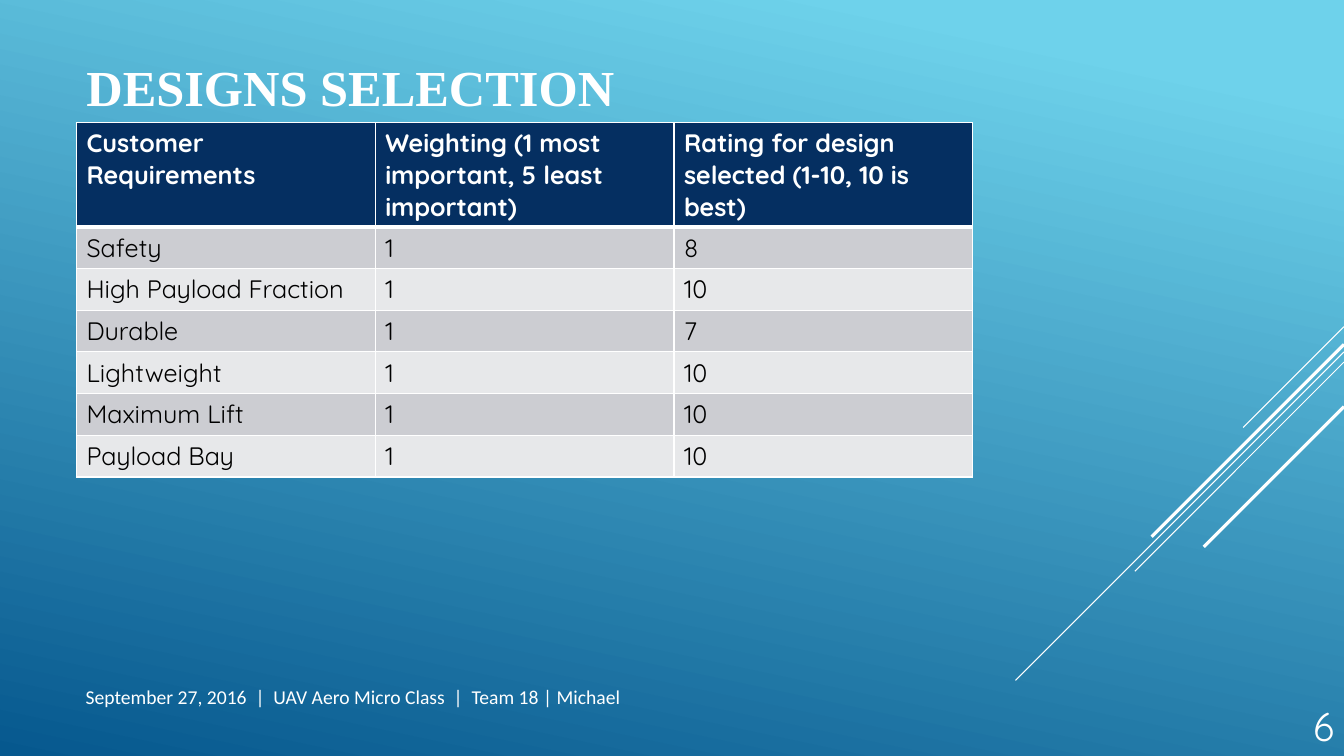
from lxml.etree import SubElement
from pptx import Presentation
from pptx.dml.color import RGBColor
from pptx.enum.shapes import MSO_CONNECTOR
from pptx.enum.text import MSO_ANCHOR, PP_ALIGN
from pptx.oxml.ns import qn
from pptx.util import Inches, Pt

COLORS = {
    "white": "FFFFFF",
    "black": "000000",
    "sky": "6ED2EB",
    "deep": "06588E",
    "navy": "052F61",
    "band_dark": "CCCDD2",
    "band_light": "E7E8EA",
}
COLS, ROWS = 160, 90  # grid over the whole slide

REQUIREMENTS = [
    ("Customer Requirements", "Weighting (1 most important, 5 least important)",
     "Rating for design selected (1-10, 10 is best)"),
    ("Safety", "1", "8"),
    ("High Payload Fraction", "1", "10"),
    ("Durable", "1", "7"),
    ("Lightweight", "1", "10"),
    ("Maximum Lift", "1", "10"),
    ("Payload Bay", "1", "10"),
]

# Diagonals from the right edge: start row, length in cells, width in points
DIAGONALS = [(38.9, 12, 0.75), (41.9, 39.1, 0.75), (43.1, 24.9, 0.75),
             (41, 22.9, 2.25), (48.4, 16.7, 2.25)]


def rgb(name):
    return RGBColor.from_string(COLORS[name])


class Deck:
    def __init__(self):
        self.prs = Presentation()
        self.prs.slide_width, self.prs.slide_height = Inches(13.33), Inches(7.5)
        self.s = self.prs.slides.add_slide(self.prs.slide_layouts[6])

    def x(self, cols):
        return round(self.prs.slide_width * cols / COLS)

    def y(self, rows):
        return round(self.prs.slide_height * rows / ROWS)

    def box(self, left, top, width, height):
        return self.x(left), self.y(top), self.x(width), self.y(height)

    def background(self, start, end, angle):
        fill = self.s.background.fill
        fill.gradient()
        fill.gradient_angle = 360 - angle  # the library counts counter-clockwise
        for stop, color, position in zip(fill.gradient_stops, (start, end), (0.1, 1)):
            stop.color.rgb = rgb(color)
            stop.position = position

    def diagonal(self, top, length, width):
        line = self.s.shapes.add_connector(
            MSO_CONNECTOR.STRAIGHT, self.x(COLS), self.y(top),
            self.x(COLS - length), self.y(top + length))
        line.line.color.rgb = rgb("white")
        line.line.width = Pt(width)
        SubElement(line._element.spPr, qn("a:effectLst"))

    def run(self, p, text, font, size, color="white", bold=False):
        r = p.add_run()
        r.text = text
        r.font.name, r.font.size, r.font.bold = font, Pt(size), bold
        r.font.color.rgb = rgb(color)

    def text(self, box, text, font, size, bold=False,
             anchor=MSO_ANCHOR.TOP, align=PP_ALIGN.LEFT):
        tf = self.s.shapes.add_textbox(*self.box(*box)).text_frame
        tf.word_wrap = True
        tf.vertical_anchor = anchor
        p = tf.paragraphs[0]
        p.alignment = align
        self.run(p, text, font, size, bold=bold)

    def borders(self, cell, bottom):
        # Borders come before the fill in the cell's properties
        tcPr = cell._tc.get_or_add_tcPr()
        for side, width in (("L", 1), ("R", 1), ("T", 1), ("B", bottom)):
            ln = SubElement(tcPr, qn(f"a:ln{side}"), w=str(Pt(width)))
            fill = SubElement(ln, qn("a:solidFill"))
            SubElement(fill, qn("a:srgbClr"), val=COLORS["white"])

    def table(self, box, data, header_height, row_height):
        table = self.s.shapes.add_table(
            len(data), len(data[0]), *self.box(*box)).table
        for i, values in enumerate(data):
            header = i == 0
            table.rows[i].height = self.y(header_height if header else row_height)
            band = "navy" if header else ("band_light", "band_dark")[i % 2]
            for j, value in enumerate(values):
                cell = table.cell(i, j)
                self.borders(cell, bottom=3 if header else 1)
                cell.fill.solid()
                cell.fill.fore_color.rgb = rgb(band)
                self.run(cell.text_frame.paragraphs[0], value, "Quicksand", 18,
                         "white" if header else "black", bold=header)


def main():
    deck = Deck()

    # Backdrop
    deck.background("sky", "deep", 102)
    for diagonal in DIAGONALS:
        deck.diagonal(*diagonal)

    # Title
    deck.text((9.1, 4.3, 120.5, 11.9), "DESIGNS SELECTION", "Times New Roman", 36,
              bold=True, anchor=MSO_ANCHOR.MIDDLE)

    # Footer and slide number
    deck.text((9, 81, 99, 4.8),
              "September 27, 2016  |  UAV Aero Micro Class  |  Team 18 | Michael",
              "Calibri", 14)
    deck.text((145, 81, 15, 8.8), "6", "Quicksand", 28,
              anchor=MSO_ANCHOR.BOTTOM, align=PP_ALIGN.RIGHT)

    # Requirements table
    deck.table((9.1, 14.6, 106.7, 42.2), REQUIREMENTS,
               header_height=12.4, row_height=4.97)

    deck.prs.save("out.pptx")


if __name__ == "__main__":
    main()
